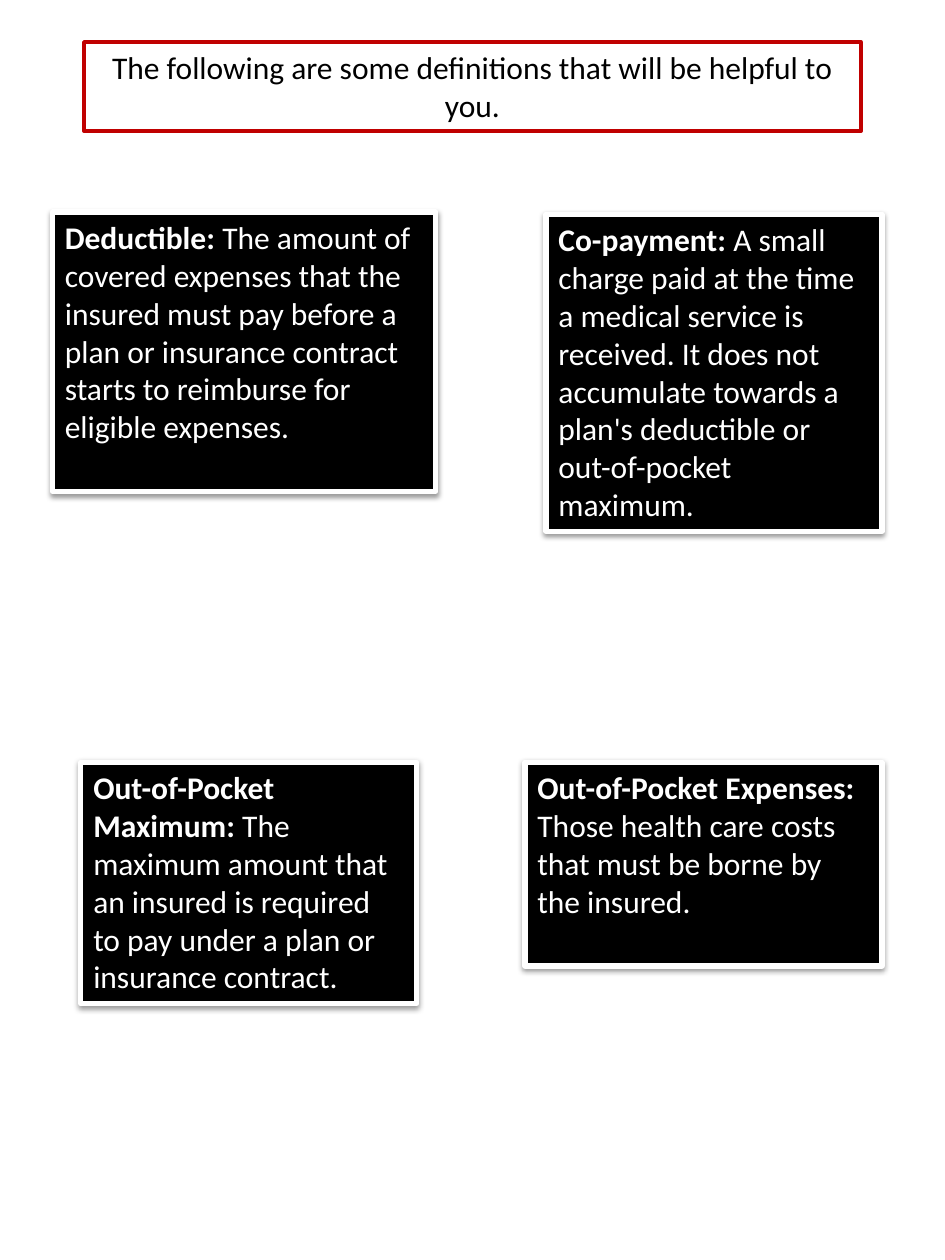
from lxml import etree
from pptx import Presentation
from pptx.dml.color import RGBColor
from pptx.enum.shapes import MSO_SHAPE
from pptx.enum.text import MSO_ANCHOR, MSO_AUTO_SIZE, PP_ALIGN
from pptx.oxml.ns import qn
from pptx.util import Inches, Pt

RECTANGLE = MSO_SHAPE.RECTANGLE
TOP = MSO_ANCHOR.TOP
NO_FIT = MSO_AUTO_SIZE.NONE
LEFT, CENTER = PP_ALIGN.LEFT, PP_ALIGN.CENTER
WIDTH, HEIGHT = 7.5, 10
COLUMNS, ROWS = 90, 120
TITLE_ONLY = 5

HEADING = "The following are some definitions that will be helpful to you."
DEFINITIONS = [
    ((5, 20.2, 36.5, 26.6), "Deductible:",
     " The amount of covered expenses that the insured must pay before a plan "
     "or insurance contract starts to reimburse for eligible expenses."),
    ((50, 72.6, 34, 19.4), "Out-of-Pocket Expenses:",
     " Those health care costs that must be borne by the insured."),
    ((7.7, 72.6, 32, 23), "Out-of-Pocket Maximum:",
     " The maximum amount that an insured is required to pay under a plan "
     "or insurance contract."),
    ((52, 20.4, 32, 30.2), "Co-payment:",
     " A small charge paid at the time a medical service is received. It does not "
     "accumulate towards a plan's deductible or out-of-pocket maximum."),
]


def color(hex_string):
    return RGBColor.from_string(hex_string)


class DefinitionSlide:
    """Holds the style of the slide and draws its heading and definition cards."""

    font_name, font_size = "Calibri", 18
    black, white, red = "000000", "FFFFFF", "C00000"

    def __init__(self, slide):
        self.slide = slide

    def place(self, column, row, columns, rows):
        across, down = WIDTH / COLUMNS, HEIGHT / ROWS
        return (Inches(column * across), Inches(row * down),
                Inches(columns * across), Inches(rows * down))

    def style(self, box, fill, line, line_width, text, align):
        box.fill.solid()
        box.fill.fore_color.rgb = color(fill)
        box.line.color.rgb = color(line)
        box.line.width = Pt(line_width)
        frame = box.text_frame
        frame.word_wrap = True
        frame.auto_size = NO_FIT
        frame.vertical_anchor = TOP
        paragraph = frame.paragraphs[0]
        paragraph.alignment = align
        paragraph.font.name = self.font_name
        paragraph.font.size = Pt(self.font_size)
        paragraph.font.color.rgb = color(text)
        return paragraph

    def heading(self, area, wording):
        title = self.slide.shapes.title
        title.left, title.top, title.width, title.height = self.place(*area)
        title.text_frame.text = wording
        self.style(title, self.white, self.red, 2, self.black, CENTER)

    def card(self, area, term, meaning):
        box = self.slide.shapes.add_shape(RECTANGLE, *self.place(*area))
        paragraph = self.style(box, self.black, self.white, 3, self.white, LEFT)
        for wording, bold in ((term, True), (meaning, False)):
            run = paragraph.add_run()
            run.text = wording
            run.font.bold = bold
        self.shadow(box)

    def shadow(self, box):
        box.shadow.inherit = False
        effects = box._element.spPr.find(qn("a:effectLst"))
        outer = etree.SubElement(
            effects, qn("a:outerShdw"), blurRad=str(Pt(3.1)), dist=str(Pt(1.6)),
            dir="5400000", rotWithShape="0")
        tint = etree.SubElement(outer, qn("a:srgbClr"), val=self.black)
        etree.SubElement(tint, qn("a:alpha"), val="38000")


def main():
    deck = Presentation()
    deck.slide_width, deck.slide_height = Inches(WIDTH), Inches(HEIGHT)
    page = DefinitionSlide(deck.slides.add_slide(deck.slide_layouts[TITLE_ONLY]))
    page.heading((8, 4, 74, 8.5), HEADING)
    for area, term, meaning in DEFINITIONS:
        page.card(area, term, meaning)
    deck.save("out.pptx")


if __name__ == "__main__":
    main()
